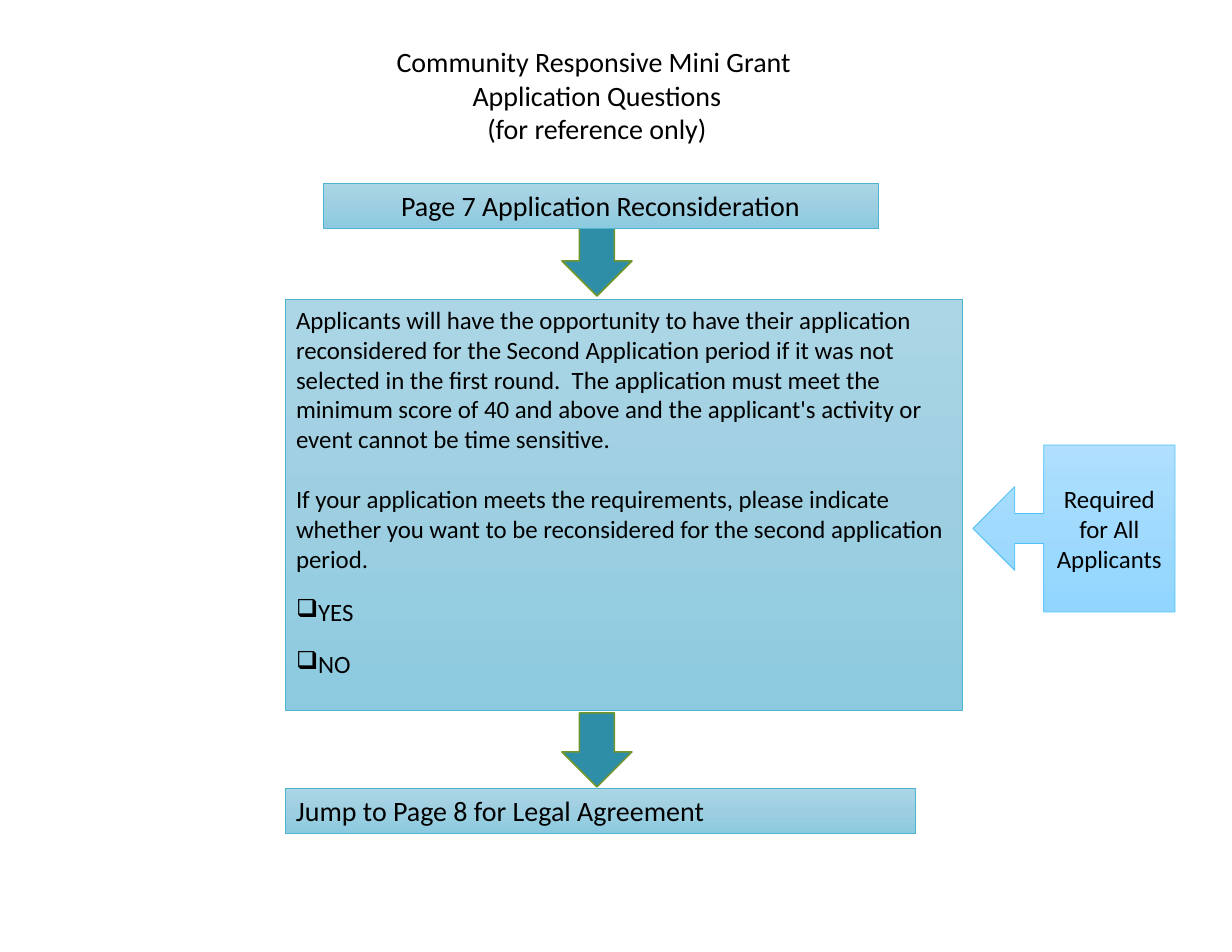
from copy import deepcopy

from pptx import Presentation
from pptx.dml.color import RGBColor
from pptx.enum.shapes import MSO_SHAPE
from pptx.enum.text import MSO_ANCHOR, PP_ALIGN
from pptx.oxml.ns import qn
from pptx.oxml.xmlchemy import OxmlElement
from pptx.util import Emu, Pt

BLACK = RGBColor(0x00, 0x00, 0x00)
ARROW_FILL = RGBColor(0x2E, 0x8E, 0xA8)
ARROW_LINE = RGBColor(0x71, 0x96, 0x29)
TEAL = [RGBColor(0xAC, 0xD6, 0xE6), RGBColor(0x9E, 0xCF, 0xE1), RGBColor(0x8C, 0xCA, 0xE0)]
TEAL_LINE = RGBColor(0x4E, 0xB3, 0xCF)
SKY = [RGBColor(0xB0, 0xE0, 0xFE), RGBColor(0xA0, 0xDA, 0xFD), RGBColor(0x90, 0xD6, 0xFF)]
SKY_LINE = RGBColor(0x51, 0xC3, 0xF9)
FONT = "Calibri"
DPI = 112


def px(n):
    """Turn pixels into EMU."""
    return Emu(round(n * 914400 / DPI))


def add_text(tf, lines, size, align=PP_ALIGN.LEFT, before=0, after=0):
    """Write one paragraph per line and return the paragraphs."""
    tf.word_wrap = True
    for i, line in enumerate(lines):
        p = tf.add_paragraph() if i else tf.paragraphs[0]
        p.alignment = align
        p.space_before, p.space_after = Pt(before), Pt(after)
        r = p.add_run()
        r.text = line
        r.font.name, r.font.size, r.font.color.rgb = FONT, Pt(size), BLACK
    return tf.paragraphs


def add_panel(slide, kind, box, colors, line):
    """Add a shape with a three-stop gradient running downwards."""
    s = slide.shapes.add_shape(kind, *map(px, box))
    s.shadow.inherit = False
    s.fill.gradient()
    s.fill.gradient_angle = 270
    stops = s._element.spPr.find(qn("a:gradFill")).find(qn("a:gsLst"))
    middle = deepcopy(stops[0])
    middle.set("pos", "50000")
    stops.insert(1, middle)
    for stop, color in zip(s.fill.gradient_stops, colors):
        stop.color.rgb = color
    s.line.color.rgb, s.line.width = line, Pt(0.5)
    s.text_frame.vertical_anchor = MSO_ANCHOR.TOP
    return s


def add_title(slide, box, lines):
    """Add the centred heading."""
    tf = slide.shapes.add_textbox(*map(px, box)).text_frame
    add_text(tf, lines, 18, PP_ALIGN.CENTER)


def add_banner(slide, box, text, align):
    """Add a one-line step of the flow."""
    s = add_panel(slide, MSO_SHAPE.RECTANGLE, box, TEAL, TEAL_LINE)
    add_text(s.text_frame, [text], 18, align, 6, 6)


def add_down_arrow(slide, box):
    """Add a block arrow leading to the next step."""
    s = slide.shapes.add_shape(MSO_SHAPE.DOWN_ARROW, *map(px, box))
    s.shadow.inherit = False
    s.fill.solid()
    s.fill.fore_color.rgb = ARROW_FILL
    s.line.color.rgb, s.line.width = ARROW_LINE, Pt(1)


def add_question(slide, box, paragraphs, choices):
    """Add the question panel with its checkbox choices."""
    s = add_panel(slide, MSO_SHAPE.RECTANGLE, box, TEAL, TEAL_LINE)
    ps = add_text(s.text_frame, paragraphs + choices, 16)
    for p in ps[1:len(paragraphs)]:
        p.space_before = Pt(19.5)
    for p in ps[len(paragraphs):]:
        p.space_before = Pt(14.6)
        pPr = p._p.get_or_add_pPr()
        pPr.set("marL", str(px(21)))
        pPr.set("indent", str(-px(21)))
        bullet = OxmlElement("a:buChar")
        bullet.set("char", "❑")
        pPr.append(bullet)


def add_callout(slide, box, text):
    """Add the side callout pointing left at the question."""
    s = add_panel(slide, MSO_SHAPE.LEFT_ARROW_CALLOUT, box, SKY, SKY_LINE)
    for i, value in enumerate((0.18, 0.25, 0.25, 0.65)):
        s.adjustments[i] = value
    s.text_frame.vertical_anchor = MSO_ANCHOR.MIDDLE
    add_text(s.text_frame, [text], 16, PP_ALIGN.CENTER)


def main():
    """Build the slide and save it."""
    prs = Presentation()
    prs.slide_width, prs.slide_height = px(11 * DPI), px(8.5 * DPI)
    slide = prs.slides.add_slide(prs.slide_layouts[6])
    add_title(slide, (289, 39, 616, 113), [
        "Community Responsive Mini Grant ",
        "Application Questions",
        "(for reference only)",
    ])
    for top in (222, 713):
        add_down_arrow(slide, (562, top, 70, 74))
    add_banner(slide, (323, 183, 555, 45), "Page 7 Application Reconsideration", PP_ALIGN.CENTER)
    add_banner(slide, (285, 788, 630, 45), "Jump to Page 8 for Legal Agreement", PP_ALIGN.LEFT)
    add_question(slide, (285, 299, 677, 411), [
        "Applicants will have the opportunity to have their application reconsidered "
        "for the Second Application period if it was not selected in the first round.  "
        "The application must meet the minimum score of 40 and above and the "
        "applicant's activity or event cannot be time sensitive.",
        "If your application meets the requirements, please indicate whether you want "
        "to be reconsidered for the second application period.",
    ], ["YES", "NO"])
    add_callout(slide, (973, 445, 202, 167), "Required for All Applicants")
    prs.save("out.pptx")


if __name__ == "__main__":
    main()
